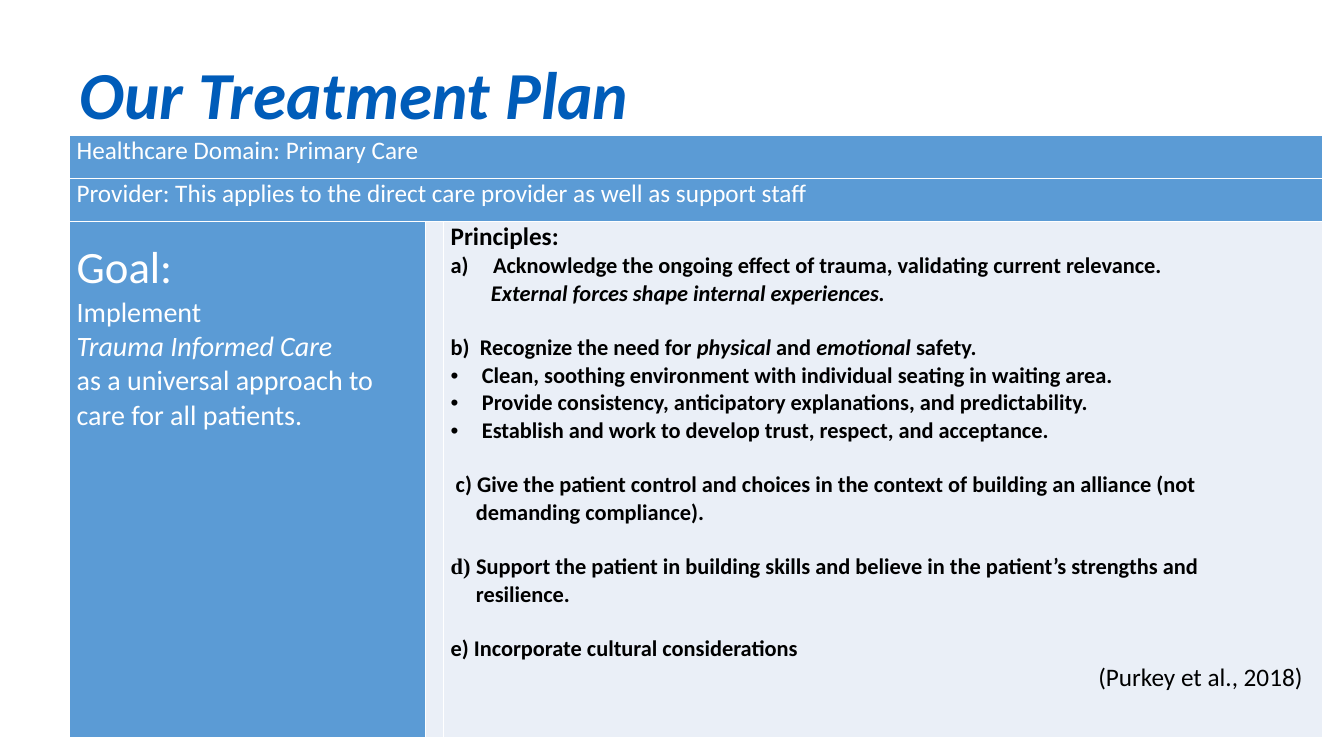
from dataclasses import dataclass

from lxml import etree
from pptx import Presentation
from pptx.dml.color import RGBColor
from pptx.enum.text import MSO_ANCHOR, PP_ALIGN
from pptx.oxml.ns import qn
from pptx.util import Inches, Pt

MIDDLE = MSO_ANCHOR.MIDDLE
LEFT, RIGHT = PP_ALIGN.LEFT, PP_ALIGN.RIGHT
BREAK = "\v"


@dataclass(frozen=True)
class Theme:
    font: str = "Calibri"
    serif: str = "Times New Roman"
    title: str = "005CB9"
    blue: str = "5B9BD5"
    pale: str = "EAEFF7"
    white: str = "FFFFFF"
    black: str = "000000"
    title_size: int = 48
    goal_size: int = 32
    lead_size: int = 20
    head_size: int = 18
    body_size: int = 16


THEME = Theme()


@dataclass(frozen=True)
class Bit:
    text: str
    italic: bool = False
    font: str = THEME.font


@dataclass(frozen=True)
class Line:
    bits: tuple[Bit, ...]
    size: int = THEME.body_size
    bold: bool = True
    before: float = 0
    left: float = 0
    first: float = 0
    bullet: str = ""
    align: PP_ALIGN = LEFT


GAP = 19.5  # one body line, in points
HEADS = (
    "Healthcare Domain: Primary Care",
    "Provider: This applies to the direct care provider as well as support staff",
)
GOAL = (
    Line((Bit("Goal:"),), THEME.goal_size, False),
    Line((Bit("Implement"),), THEME.lead_size, False),
    Line((Bit("Trauma Informed Care", True),), THEME.lead_size, False),
    Line((Bit("as a universal approach to care for all patients."),),
         THEME.lead_size, False),
)
POINTS = (
    "Clean, soothing environment with individual seating in waiting area.",
    "Provide consistency, anticipatory explanations, and predictability.",
    "Establish and work to develop trust, respect, and acceptance.",
)
RULES = (
    Line((Bit("Principles:"),), THEME.head_size),
    Line((Bit("Acknowledge the ongoing effect of trauma, validating current relevance."),),
         left=0.42, first=-0.42, bullet="a)"),
    Line((Bit("External forces shape internal experiences.", True),), left=0.4),
    Line((Bit("b)\tRecognize the need for "), Bit("physical ", True), Bit("and "),
          Bit("emotional", True), Bit(" safety.")),
         before=GAP, left=0.29, first=-0.29),
    *(Line((Bit(point),), left=0.31, first=-0.31, bullet="•") for point in POINTS),
    Line((Bit("c) Give the patient control and choices in the context of "
              "building an alliance (not"), Bit(BREAK),
          Bit("demanding compliance).")),
         before=GAP, left=0.25, first=-0.2),
    Line((Bit("d) ", font=THEME.serif),
          Bit("Support the patient in building skills and believe in the "
              "patient’s strengths and"), Bit(BREAK), Bit("resilience.")),
         before=GAP, left=0.25, first=-0.25),
    Line((Bit("e) Incorporate cultural considerations"),), before=GAP),
    Line((Bit("(Purkey et al., 2018)"),), THEME.head_size, False, align=RIGHT),
)


def style(run, size: int, color: str, bold: bool, italic: bool, font: str) -> None:
    run.font.size = Pt(size)
    run.font.color.rgb = RGBColor.from_string(color)
    run.font.bold = bold
    run.font.italic = italic
    run.font.name = font


def indent(para, line: Line) -> None:
    props = para._p.get_or_add_pPr()
    props.set("marL", str(Inches(line.left)))
    props.set("indent", str(Inches(line.first)))
    if line.bullet == "•":
        etree.SubElement(props, qn("a:buFont"), typeface="Arial")
        etree.SubElement(props, qn("a:buChar"), char=line.bullet)
    elif line.bullet:
        etree.SubElement(props, qn("a:buFont"), typeface=THEME.font)
        etree.SubElement(props, qn("a:buAutoNum"), type="alphaLcParenR")


def write(cell, lines: tuple[Line, ...], color: str) -> None:
    frame = cell.text_frame
    for spot, line in enumerate(lines):
        para = frame.add_paragraph() if spot else frame.paragraphs[0]
        indent(para, line)
        para.alignment = line.align
        if line.before:
            para.space_before = Pt(line.before)
        for bit in line.bits:
            if bit.text == BREAK:
                para.add_line_break()
                etree.SubElement(para._p[-1], qn("a:rPr"), sz=str(line.size * 100))
                continue
            run = para.add_run()
            run.text = bit.text
            style(run, line.size, color, line.bold, bit.italic, bit.font)


def paint(cell, color: str) -> None:
    cell.margin_left = cell.margin_right = Inches(0.07)
    cell.margin_top = cell.margin_bottom = 0
    props = cell._tc.get_or_add_tcPr()
    for side in ("a:lnL", "a:lnR", "a:lnT", "a:lnB"):
        edge = etree.SubElement(props, qn(side), w=str(Pt(1)))
        fill = etree.SubElement(edge, qn("a:solidFill"))
        etree.SubElement(fill, qn("a:srgbClr"), val=THEME.white)
    cell.fill.solid()
    cell.fill.fore_color.rgb = RGBColor.from_string(color)


def add_title(slide) -> None:
    title = slide.shapes.title
    title.left, title.top = Inches(0.69), Inches(0.24)
    title.width, title.height = Inches(11.5), Inches(1.45)
    frame = title.text_frame
    frame.text = "Our Treatment Plan"
    frame.vertical_anchor = MIDDLE
    para = frame.paragraphs[0]
    para.alignment = LEFT
    para.line_spacing = 0.9
    style(para.runs[0], THEME.title_size, THEME.title, True, True, THEME.font)


def add_plan(slide) -> None:
    widths, heights = (3.53, 0.18, 8.72), (0.43, 0.43, 5.12)
    table = slide.shapes.add_table(
        len(heights), len(widths), Inches(0.69), Inches(1.34),
        Inches(sum(widths)), Inches(sum(heights))).table
    table.first_row = table.horz_banding = False
    for column, width in zip(table.columns, widths):
        column.width = Inches(width)
    for row, height in zip(table.rows, heights):
        row.height = Inches(height)

    # Fills and borders
    last = len(HEADS)
    for row in range(len(heights)):
        for col in range(len(widths)):
            dark = row < last or col == 0
            paint(table.cell(row, col), THEME.blue if dark else THEME.pale)

    # Heading rows across the full width
    for row, head in enumerate(HEADS):
        cell = table.cell(row, 0)
        cell.merge(table.cell(row, len(widths) - 1))
        write(cell, (Line((Bit(head),), THEME.head_size, False),), THEME.white)

    # Goal and principles
    goal, rules = table.cell(last, 0), table.cell(last, 2)
    goal.margin_top = Inches(0.19)
    rules.margin_right = Inches(0.2)
    write(goal, GOAL, THEME.white)
    write(rules, RULES, THEME.black)


def main() -> None:
    deck = Presentation()
    deck.slide_width, deck.slide_height = Inches(13.33), Inches(7.5)
    slide = deck.slides.add_slide(deck.slide_layouts[5])
    add_title(slide)
    add_plan(slide)
    deck.save("out.pptx")


if __name__ == "__main__":
    main()
